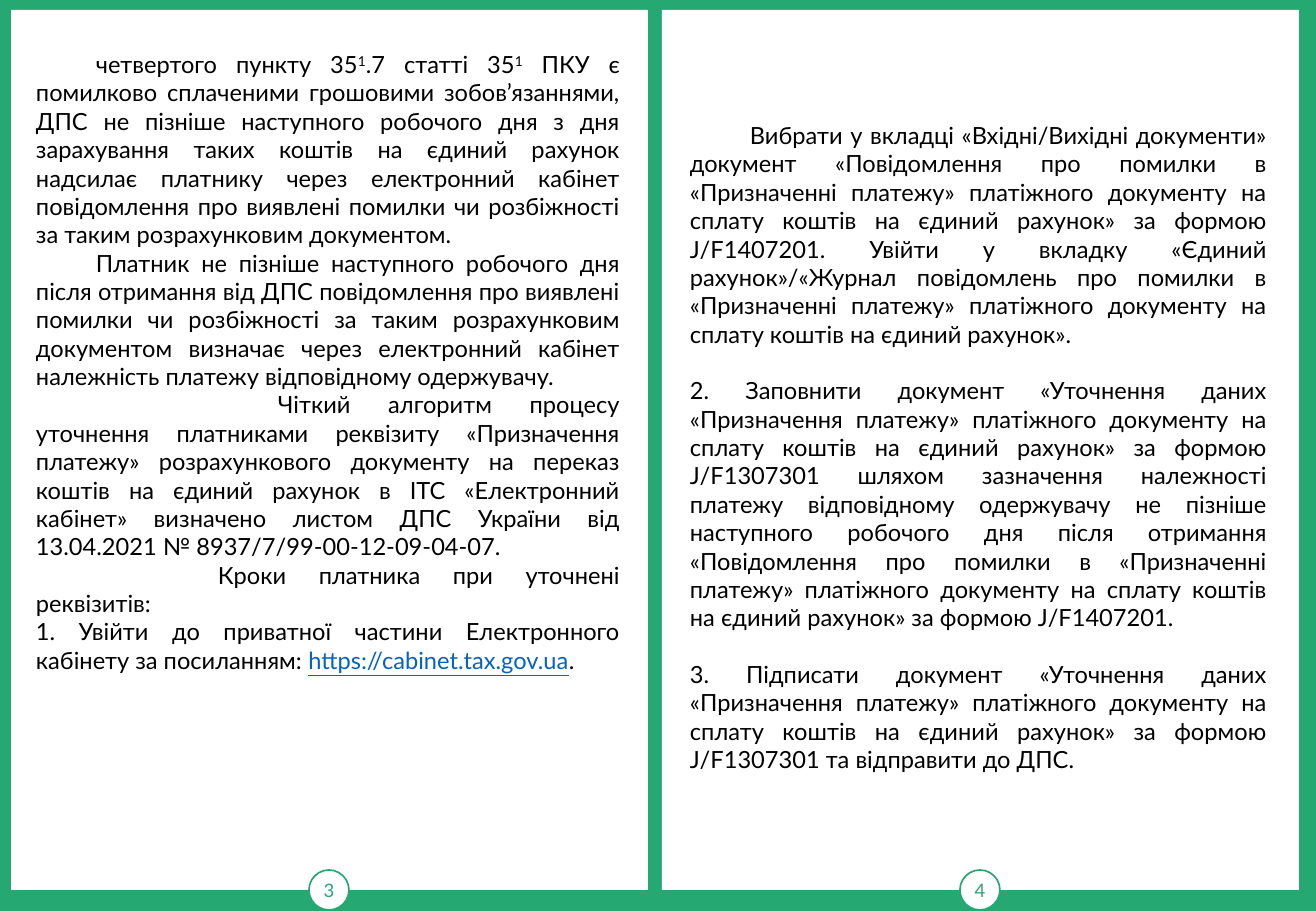
from pptx import Presentation
from pptx.dml.color import RGBColor
from pptx.enum.shapes import MSO_SHAPE as Shape
from pptx.enum.text import MSO_ANCHOR as Anchor, PP_ALIGN as Align
from pptx.util import Emu, Pt

GREEN = RGBColor(0x25, 0xA8, 0x72)
WHITE = RGBColor(0xFF, 0xFF, 0xFF)
BLACK = RGBColor(0, 0, 0)
BLUE = RGBColor(0x05, 0x63, 0xC1)
FONT = "Lato"
SCALE = 7526  # EMU in one px
WIDE, HIGH = 1316, 911
PAGE_TOP, PAGE_W, PAGE_H = 10, 637, 880
BADGE = 40
GAP = Pt(16.8)  # one line of 14 pt text

SUP = {"raised": True}
LINK = {"color": BLUE, "underline": True}

# Each paragraph: first-line indent in px, space before, runs of (text, format)
LEFT = [
    (60, 0, [
        ("четвертого пункту 35", {}), ("1", SUP), (".7 статті 35", {}), ("1", SUP),
        (" ПКУ є помилково сплаченими грошовими зобов’язаннями, ДПС не пізніше "
         "наступного робочого дня з дня зарахування таких коштів на єдиний рахунок "
         "надсилає платнику через електронний кабінет повідомлення про виявлені "
         "помилки чи розбіжності за таким розрахунковим документом.", {})]),
    (60, 0, [
        ("Платник не пізніше наступного робочого дня після отримання від ДПС "
         "повідомлення про виявлені помилки чи розбіжності за таким розрахунковим "
         "документом визначає через електронний кабінет належність платежу "
         "відповідному одержувачу.", {})]),
    (242, 0, [
        ("Чіткий алгоритм процесу уточнення платниками реквізиту «Призначення "
         "платежу» розрахункового документу на переказ коштів на єдиний рахунок в "
         "ІТС «Електронний кабінет» визначено листом ДПС України від 13.04.2021 "
         "№ 8937/7/99-00-12-09-04-07.", {})]),
    (182, 0, [("Кроки платника при уточнені реквізитів:", {})]),
    (0, 0, [
        ("1. Увійти до приватної частини Електронного кабінету за посиланням: ", {}),
        ("https://cabinet.tax.gov.ua", LINK), (".", {})]),
]
RIGHT = [
    (60, 0, [
        ("Вибрати у вкладці «Вхідні/Вихідні документи» документ «Повідомлення про "
         "помилки в «Призначенні платежу» платіжного документу на сплату коштів на "
         "єдиний рахунок» за формою J/F1407201. Увійти у вкладку «Єдиний "
         "рахунок»/«Журнал повідомлень про помилки в «Призначенні платежу» "
         "платіжного документу на сплату коштів на єдиний рахунок».", {})]),
    (0, GAP, [
        ("2. Заповнити документ «Уточнення даних «Призначення платежу» платіжного "
         "документу на сплату коштів на єдиний рахунок» за формою J/F1307301 шляхом "
         "зазначення належності платежу відповідному одержувачу не пізніше "
         "наступного робочого дня після отримання «Повідомлення про помилки в "
         "«Призначенні платежу» платіжного документу на сплату коштів на єдиний "
         "рахунок» за формою J/F1407201.", {})]),
    (0, GAP, [
        ("3. Підписати документ «Уточнення даних «Призначення платежу» платіжного "
         "документу на сплату коштів на єдиний рахунок» за формою J/F1307301 та "
         "відправити до ДПС.", {})]),
]
# Page number, page left, text box (left, top, width, height), paragraphs
PAGES = [
    ("3", 11, (24, 44, 608, 640), LEFT),
    ("4", 662, (678, 115, 601, 665), RIGHT),
]


def px(*nums):
    return [Emu(num * SCALE) for num in nums]


def write(para, text, size=14, color=BLACK, raised=False, underline=False):
    run = para.add_run()
    run.text = text
    font = run.font
    font.name, font.size = FONT, Pt(size)
    font.color.rgb = color
    if underline:
        font.underline = True
    if raised:
        font._element.set("baseline", "30000")


def add_plain(slide, kind, box):
    """Add a white shape with no line and no shadow."""
    shape = slide.shapes.add_shape(kind, *px(*box))
    shape.shadow.inherit = False
    shape.fill.solid()
    shape.fill.fore_color.rgb = WHITE
    shape.line.fill.background()
    return shape


def add_page(slide, number, left):
    add_plain(slide, Shape.RECTANGLE, (left, PAGE_TOP, PAGE_W, PAGE_H))
    top = PAGE_TOP + PAGE_H - BADGE // 2
    badge = add_plain(slide, Shape.OVAL, (left + (PAGE_W - BADGE) // 2, top, BADGE, BADGE))
    badge.line.color.rgb = GREEN
    badge.line.width = Pt(1)
    frame = badge.text_frame
    frame.margin_left = frame.margin_right = 0
    frame.vertical_anchor = Anchor.MIDDLE
    para = frame.paragraphs[0]
    para.alignment = Align.CENTER
    write(para, number, size=11, color=GREEN)


def add_text(slide, box, paras):
    frame = slide.shapes.add_textbox(*px(*box)).text_frame
    frame.word_wrap = True
    for i, (indent, before, runs) in enumerate(paras):
        para = frame.add_paragraph() if i else frame.paragraphs[0]
        para.alignment = Align.JUSTIFY
        para.space_before = before
        para._p.get_or_add_pPr().set("indent", str(indent * SCALE))
        for text, style in runs:
            write(para, text, **style)


def main():
    deck = Presentation()
    deck.slide_width, deck.slide_height = px(WIDE, HIGH)
    slide = deck.slides.add_slide(deck.slide_layouts[6])
    slide.background.fill.solid()
    slide.background.fill.fore_color.rgb = GREEN
    for number, left, box, paras in PAGES:
        add_page(slide, number, left)
        add_text(slide, box, paras)
    deck.save("out.pptx")


if __name__ == "__main__":
    main()
